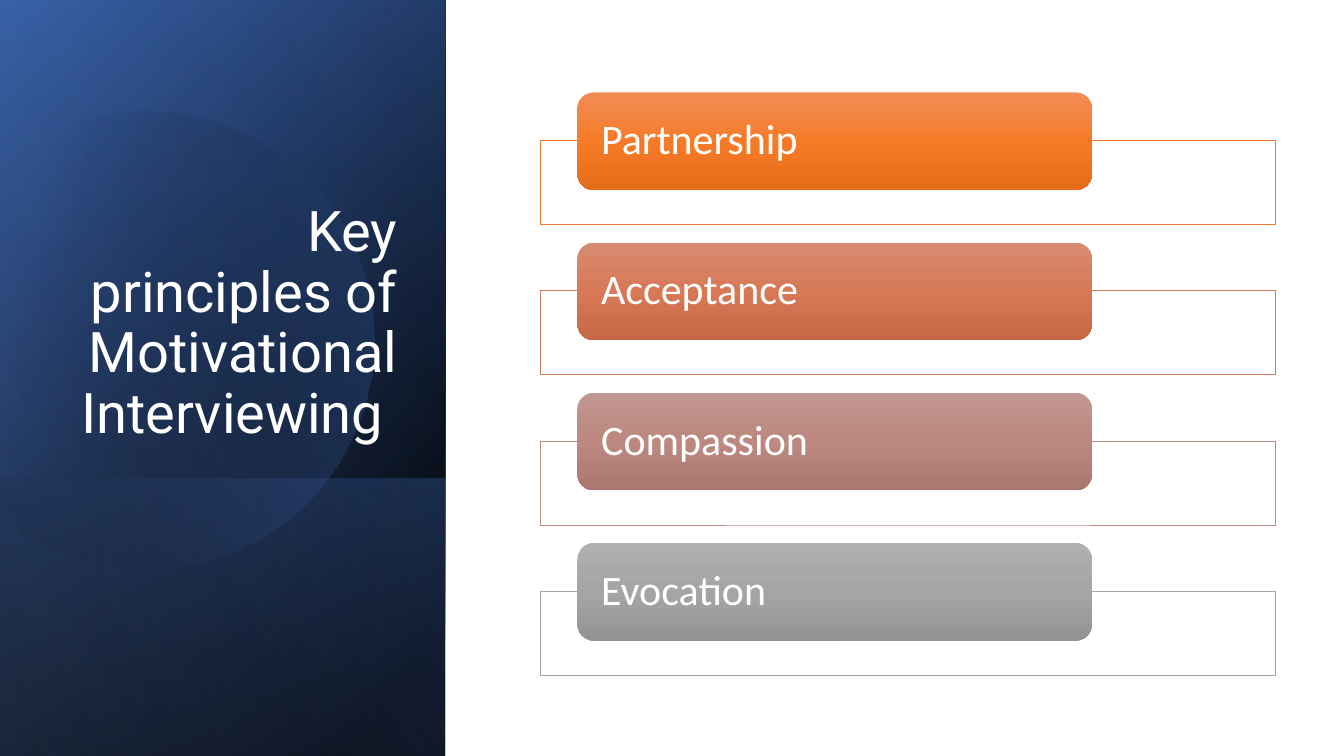
from dataclasses import dataclass
from math import cos, radians, sin

from lxml.etree import SubElement
from pptx import Presentation
from pptx.dml.color import RGBColor
from pptx.enum.shapes import MSO_SHAPE
from pptx.enum.text import MSO_ANCHOR, PP_ALIGN
from pptx.oxml.ns import qn
from pptx.shapes.autoshape import Shape
from pptx.slide import Slide
from pptx.util import Pt

PX = 9525  # EMU per px, 96 px to the inch

WHITE = RGBColor(0xFF, 0xFF, 0xFF)
BLACK = RGBColor(0x00, 0x00, 0x00)
NAVY = RGBColor(0x2F, 0x55, 0x97)
BLUE = RGBColor(0x44, 0x72, 0xC4)
SKY = RGBColor(0x8F, 0xAA, 0xDC)
ORANGE = RGBColor(0xED, 0x7D, 0x31)
ORANGE_TOP = RGBColor(0xF1, 0x8C, 0x57)
ORANGE_MID = RGBColor(0xF6, 0x7B, 0x28)
ORANGE_LOW = RGBColor(0xE5, 0x6C, 0x19)
CLAY = RGBColor(0xD1, 0x7B, 0x5C)
CLAY_TOP = RGBColor(0xD7, 0x8B, 0x72)
CLAY_MID = RGBColor(0xD7, 0x79, 0x56)
CLAY_LOW = RGBColor(0xC6, 0x68, 0x46)
ROSE = RGBColor(0xB9, 0x8A, 0x82)
ROSE_TOP = RGBColor(0xC1, 0x97, 0x91)
ROSE_MID = RGBColor(0xBC, 0x88, 0x80)
ROSE_LOW = RGBColor(0xAA, 0x76, 0x6E)
GREY = RGBColor(0xA5, 0xA5, 0xA5)
GREY_TOP = RGBColor(0xAF, 0xAF, 0xAF)
GREY_LOW = RGBColor(0x93, 0x93, 0x93)


@dataclass(frozen=True)
class Stop:
    pos: int
    color: RGBColor
    alpha: int = 100


@dataclass(frozen=True)
class Box:
    x: int
    y: int
    w: int
    h: int


@dataclass(frozen=True)
class Layer:
    box: Box
    angle: int
    stops: tuple[Stop, ...]


@dataclass(frozen=True)
class Principle:
    name: str
    line: RGBColor
    top: RGBColor
    mid: RGBColor
    low: RGBColor


# Side panel: each layer is laid sideways, then turned by 90 degrees
PANEL = Box(-148, 148, 720, 424)
STRIP = Box(80, 376, 264, 424)
LAYERS_BELOW = (
    Layer(PANEL, 50, (Stop(8, BLACK), Stop(100, NAVY))),
    Layer(PANEL, 30, (Stop(0, BLACK, 0), Stop(99, BLUE, 46))),
    Layer(STRIP, 130, (Stop(2, BLUE, 29), Stop(100, BLACK, 30))),
)
LAYER_ABOVE = Layer(PANEL, 120, (Stop(0, BLACK, 0), Stop(99, SKY, 11)))

PRINCIPLES = (
    Principle("Partnership", ORANGE, ORANGE_TOP, ORANGE_MID, ORANGE_LOW),
    Principle("Acceptance", CLAY, CLAY_TOP, CLAY_MID, CLAY_LOW),
    Principle("Compassion", ROSE, ROSE_TOP, ROSE_MID, ROSE_LOW),
    Principle("Evocation", GREY, GREY_TOP, GREY, GREY_LOW),
)
ROW_PITCH = 143


def add_alpha(color_element, percent: int) -> None:
    SubElement(color_element, qn("a:alpha"), val=str(percent * 1000))


def set_gradient(sp: Shape, angle: int, stops: tuple[Stop, ...]) -> None:
    sp.fill.gradient()
    sp.fill.gradient_angle = 360 - angle
    gs_lst = sp._element.spPr.find(qn("a:gradFill")).find(qn("a:gsLst"))
    gs_lst.clear()
    for stop in stops:
        gs = SubElement(gs_lst, qn("a:gs"), pos=str(stop.pos * 1000))
        clr = SubElement(gs, qn("a:srgbClr"), val=str(stop.color))
        if stop.alpha < 100:
            add_alpha(clr, stop.alpha)


def add_box(s: Slide, kind: MSO_SHAPE, box: Box) -> Shape:
    sp = s.shapes.add_shape(kind, box.x * PX, box.y * PX, box.w * PX, box.h * PX)
    sp.shadow.inherit = False
    sp.line.fill.background()
    return sp


def add_layer(s: Slide, layer: Layer) -> None:
    sp = add_box(s, MSO_SHAPE.RECTANGLE, layer.box)
    sp.rotation = 90
    sp._element.spPr.find(qn("a:xfrm")).set("flipH", "1")
    set_gradient(sp, layer.angle, layer.stops)


def add_disc(s: Slide, cx: int, cy: int, radius: int, tilt: int) -> None:
    """Draw a disc whose left side is cut off by a straight edge."""
    points = [
        (cx + radius * cos(radians(a)), cy + radius * sin(radians(a)))
        for a in range(tilt - 135, tilt + 136, 3)
    ]
    builder = s.shapes.build_freeform(*points[0], scale=PX)
    builder.add_line_segments(points[1:], close=True)
    sp = builder.convert_to_shape()
    sp.rotation = -tilt
    sp.shadow.inherit = False
    sp.line.fill.background()
    set_gradient(sp, 30, (Stop(29, BLACK, 0), Stop(100, BLUE, 43)))


def format_title(s: Slide, text: str) -> None:
    title = s.shapes.title
    title.left, title.top, title.width, title.height = 61 * PX, 177 * PX, 327 * PX, 252 * PX
    s.shapes._spTree.append(title._element)  # bring in front of the panel
    tf = title.text_frame
    tf.text = text
    tf.word_wrap = True
    tf.vertical_anchor = MSO_ANCHOR.BOTTOM
    p = tf.paragraphs[0]
    p.alignment = PP_ALIGN.RIGHT
    p.line_spacing = 0.9
    p.font.name = "Roboto"
    p.font.size = Pt(40)
    p.font.color.rgb = WHITE


def add_principle(s: Slide, row: int, item: Principle) -> None:
    offset = row * ROW_PITCH
    frame = add_box(s, MSO_SHAPE.RECTANGLE, Box(515, 134 + offset, 700, 80))
    frame.fill.solid()
    frame.fill.fore_color.rgb = WHITE
    add_alpha(frame._element.spPr.find(qn("a:solidFill"))[0], 90)
    frame.line.color.rgb = item.line
    frame.line.width = Pt(0.5)

    card = add_box(s, MSO_SHAPE.ROUNDED_RECTANGLE, Box(550, 88 + offset, 490, 93))
    set_gradient(card, 90, (Stop(0, item.top), Stop(50, item.mid), Stop(100, item.low)))
    tf = card.text_frame
    tf.text = item.name
    tf.word_wrap = True
    tf.vertical_anchor = MSO_ANCHOR.MIDDLE
    tf.margin_left = tf.margin_right = 18 * PX
    tf.margin_top = tf.margin_bottom = 0
    p = tf.paragraphs[0]
    p.alignment = PP_ALIGN.LEFT
    p.line_spacing = 0.9
    p.font.name = "Calibri"
    p.font.size = Pt(30)
    p.font.color.rgb = WHITE


def main() -> None:
    prs = Presentation()
    prs.slide_width, prs.slide_height = 1280 * PX, 720 * PX
    s = prs.slides.add_slide(prs.slide_layouts[5])

    # Side panel with title
    for layer in LAYERS_BELOW:
        add_layer(s, layer)
    add_disc(s, cx=138, cy=320, radius=218, tilt=16)
    add_layer(s, LAYER_ABOVE)
    format_title(s, "Key principles of Motivational Interviewing ")

    # List of principles
    for row, item in enumerate(PRINCIPLES):
        add_principle(s, row, item)

    prs.save("out.pptx")


if __name__ == "__main__":
    main()
